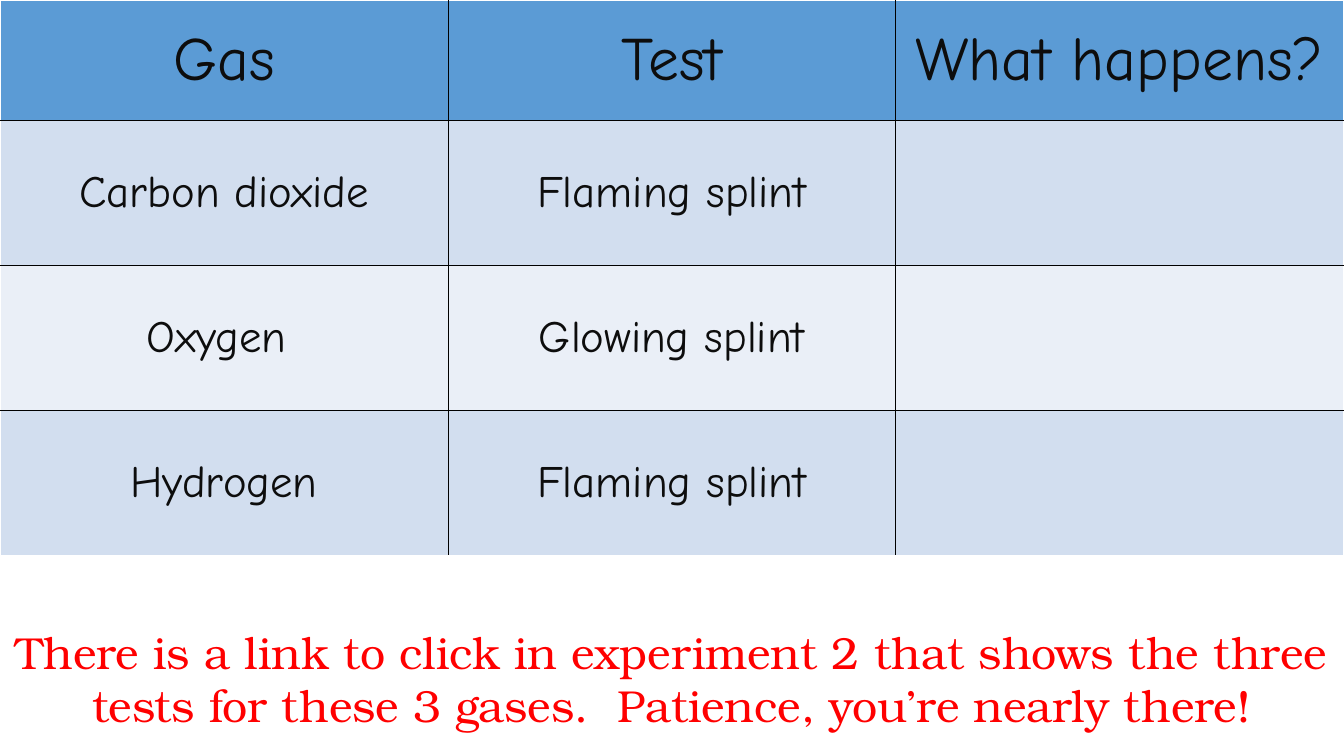
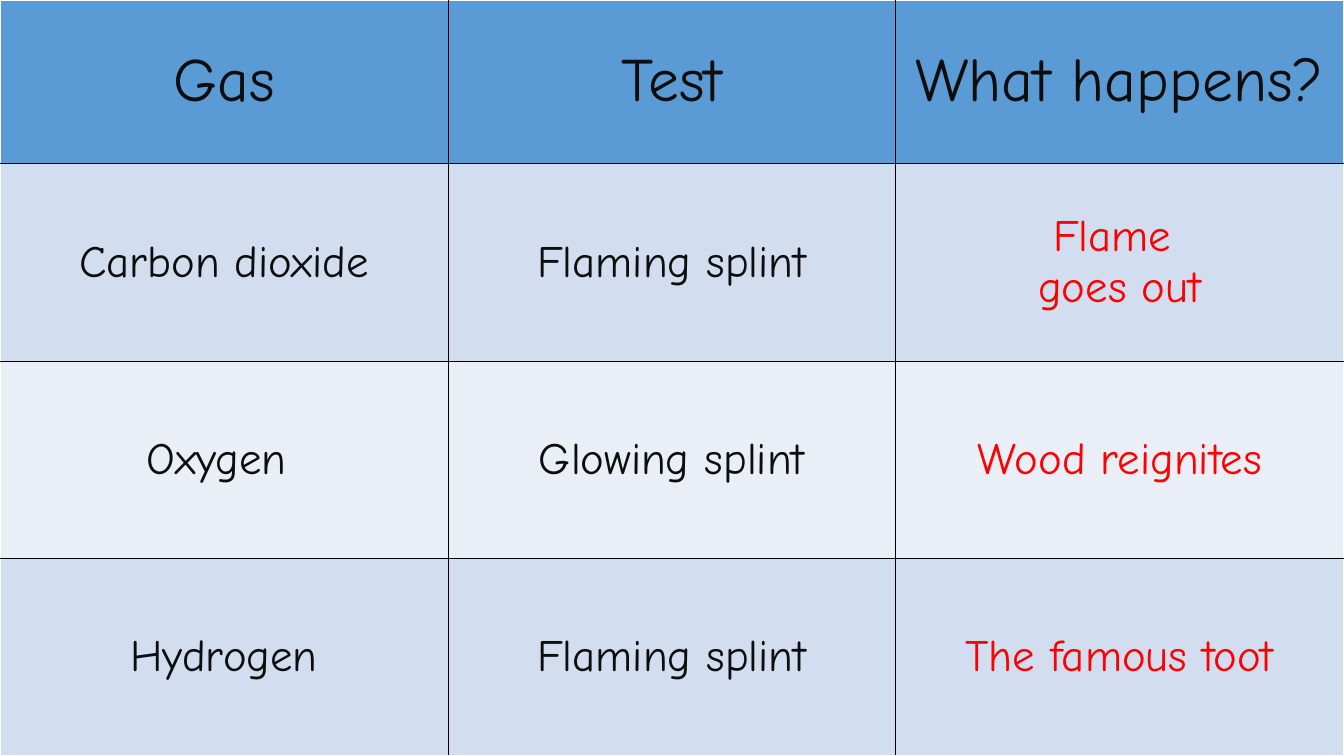
from lxml import etree
from pptx import Presentation
from pptx.dml.color import RGBColor
from pptx.enum.text import MSO_ANCHOR, PP_ALIGN
from pptx.oxml.ns import qn
from pptx.util import Pt

PX = 9525
W, H = 1280, 720
CENTER = PP_ALIGN.CENTER
MIDDLE = MSO_ANCHOR.MIDDLE
WHITE = RGBColor(0xFF, 0xFF, 0xFF)
BLACK = RGBColor(0x00, 0x00, 0x00)
INK = RGBColor(0x0D, 0x0D, 0x0D)
RED = RGBColor(0xFF, 0x00, 0x00)
HEADER = RGBColor(0x5B, 0x9B, 0xD5)
BANDS = [RGBColor(0xEA, 0xEF, 0xF7), RGBColor(0xD2, 0xDE, 0xEF)]
HAND, SERIF = "Comic Neue", "TeX Gyre Bonum"
COLUMNS = [427, 426, 427]

HEADINGS = ["Gas", "Test", "What happens?"]
TESTS = [
    ["Carbon dioxide", "Flaming splint"],
    ["Oxygen ", "Glowing splint"],
    ["Hydrogen", "Flaming splint"],
]
SLIDES = [
    (115, 138, ["", "", ""]),
    (156, 188, ["Flame \ngoes out", "Wood reignites", "The famous toot"]),
]
HINT = ("There is a link to click in experiment 2 that shows the three tests "
        "for these 3 gases.  Patience, you’re nearly there!")


def write(tf, text, size=32, color=INK, font=HAND):
    tf.word_wrap = True
    p = tf.paragraphs[0]
    p.text = text
    p.alignment = CENTER
    for r in p.runs:
        r.font.size = Pt(size)
        r.font.name = font
        r.font.color.rgb = color


def add_border(cell, side, color):
    ln = etree.SubElement(cell._tc.get_or_add_tcPr(), qn(f"a:ln{side}"), w=str(Pt(1)))
    fill = etree.SubElement(ln, qn("a:solidFill"))
    etree.SubElement(fill, qn("a:srgbClr"), val=str(color))


prs = Presentation()
prs.slide_width, prs.slide_height = W * PX, H * PX

for header_h, row_h, results in SLIDES:
    s = prs.slides.add_slide(prs.slide_layouts[6])
    rows = [HEADINGS] + [test + [result] for test, result in zip(TESTS, results)]
    last_row, last_col = len(rows) - 1, len(COLUMNS) - 1
    table_h = header_h + row_h * last_row
    table = s.shapes.add_table(len(rows), len(COLUMNS), 0, 0, W * PX, table_h * PX).table
    for column, width in zip(table.columns, COLUMNS):
        column.width = width * PX

    for i, row in enumerate(rows):
        table.rows[i].height = (row_h if i else header_h) * PX
        for j, text in enumerate(row):
            cell = table.cell(i, j)
            outer = {"L": j == 0, "R": j == last_col, "T": i == 0, "B": i == last_row}
            for side, is_outer in outer.items():
                add_border(cell, side, WHITE if is_outer else BLACK)
            cell.fill.solid()
            cell.fill.fore_color.rgb = BANDS[i % 2] if i else HEADER
            cell.vertical_anchor = MIDDLE
            write(cell.text_frame, text, size=32 if i else 44,
                  color=RED if i and j == last_col else INK)

    if not any(results):
        sp = s.shapes.add_textbox(0, 590 * PX, W * PX, 113 * PX)
        write(sp.text_frame, HINT, color=RED, font=SERIF)

prs.save("out.pptx")
